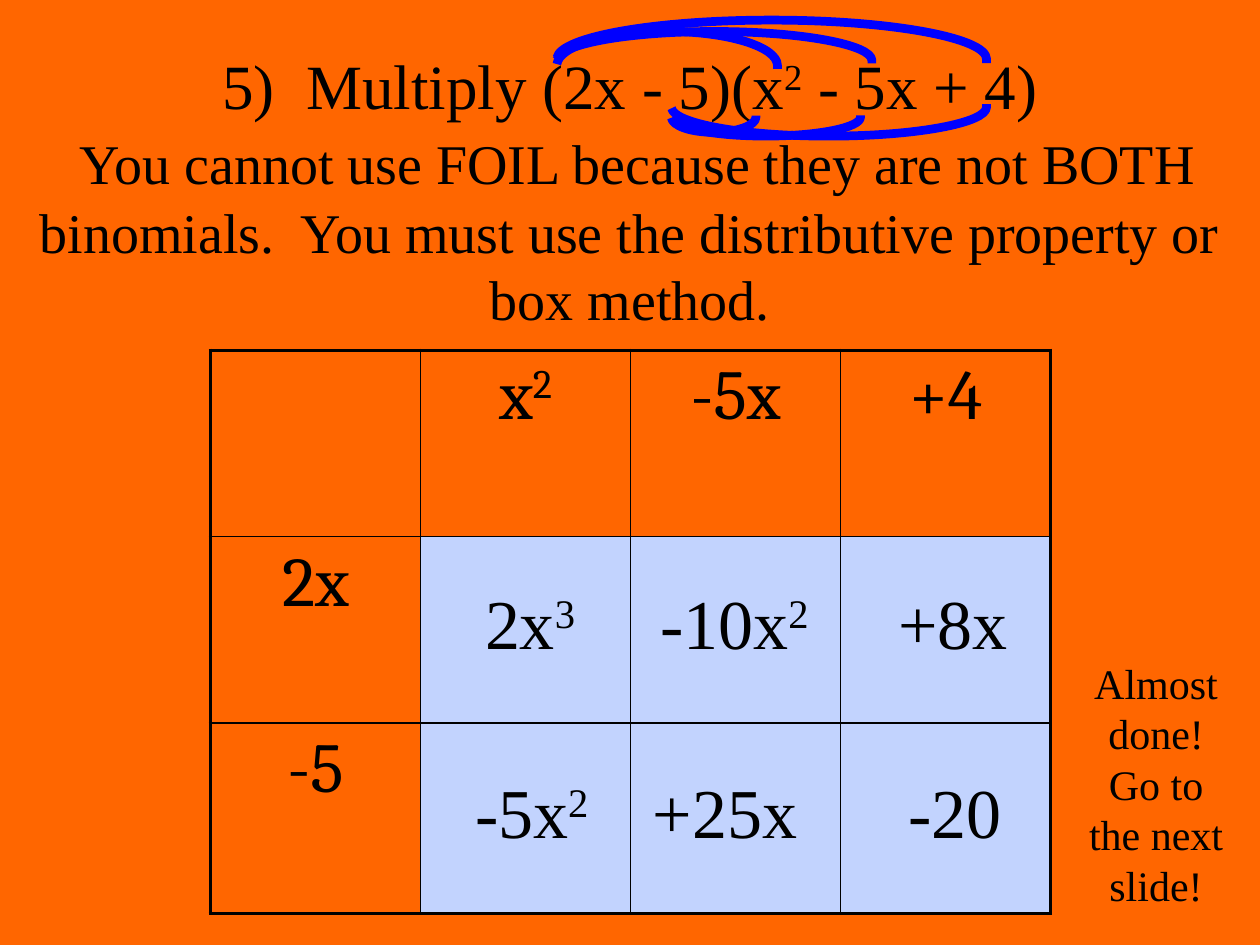
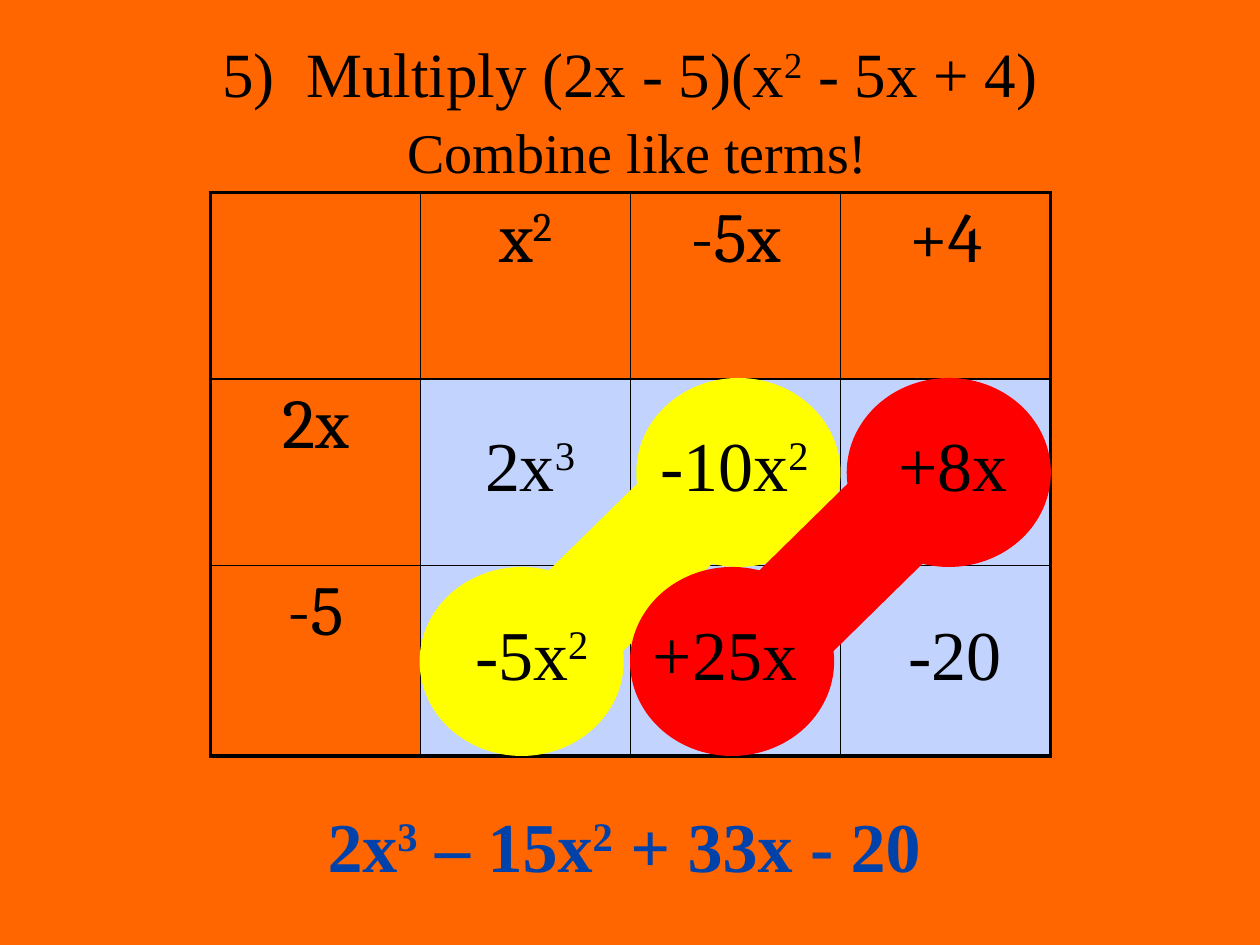
import lxml.etree
import pptx
import pptx.dml.color
import pptx.enum.shapes
import pptx.enum.text
import pptx.oxml.ns
import pptx.util

Inches = pptx.util.Inches
Pt = pptx.util.Pt
RGBColor = pptx.dml.color.RGBColor
PP_ALIGN = pptx.enum.text.PP_ALIGN
MSO_ANCHOR = pptx.enum.text.MSO_ANCHOR
MSO_SHAPE = pptx.enum.shapes.MSO_SHAPE
FIT_SHAPE = pptx.enum.text.MSO_AUTO_SIZE.SHAPE_TO_FIT_TEXT
qn = pptx.oxml.ns.qn

ORANGE = RGBColor(0xFF, 0x66, 0x00)
BLACK = RGBColor(0x00, 0x00, 0x00)
PALE_BLUE = RGBColor(0xC2, 0xD3, 0xFE)
ARC_BLUE = RGBColor(0x00, 0x00, 0xFF)
ANSWER_BLUE = RGBColor(0x00, 0x42, 0xA9)
YELLOW = RGBColor(0xFF, 0xFF, 0x00)
RED = RGBColor(0xFF, 0x00, 0x00)

SERIF = "Times New Roman"
PROBLEM = "5)  Multiply (2x - 5)(x^2 - 5x + 4)"
INSET = Inches(0.05)
MARGINS = {f"margin_{side}": INSET for side in ("left", "top", "right", "bottom")}

GRID_LABELS = [["", "x^2", "-5x", "+4"], ["2x", "", "", ""], ["-5", "", "", ""]]
GRID_WIDTH = 6.67
ROW_HEIGHTS = [1.48, 1.48, 1.51]

PRODUCT_ROWS = [
    (1.77, [("2x^3", 3.8, 0.9), ("-10x^2", 5.19, 1.34), ("+8x", 7.08, 1.12)]),
    (3.27, [("-5x^2", 3.72, 1.12), ("+25x", 5.13, 1.32), ("-20", 7.16, 0.96)]),
]

UPPER_ARCS = [(4.42, 6.17, 0.52, -0.27), (4.42, 6.92, 0.48, -0.23), (4.42, 7.83, 0.47, -0.31)]
LOWER_ARCS = [(5.33, 6.0, 0.93, 0.12), (5.33, 6.83, 0.93, 0.15), (5.33, 7.83, 0.85, 0.23)]
ARC_START = (1, -0.1)
ARC_CURVES = [
    (1, -0.07), (1, -0.03), (1, 0),
    (1, 0.55), (0.55, 1), (0, 1),
    (-0.55, 1), (-0.98, 0.57), (-1, 0.04),
]


def apply_format(target, values):
    for name, value in values.items():
        setattr(target, name, value)


def add_spans(para, text, size, font=SERIF, color=BLACK, bold=False):
    first, *raised = text.split("^")
    pieces = [(first, False)]
    for part in raised:
        pieces += [(part[0], True), (part[1:], False)]
    for piece, is_exponent in pieces:
        if not piece:
            continue
        span = para.add_run()
        span.text = piece
        apply_format(span.font, {"name": font, "size": Pt(size), "bold": bold})
        span.font.color.rgb = color
        if is_exponent:
            span._r.get_or_add_rPr().set("baseline", "30000")


def add_text_frame(page, left, top, width, height, **settings):
    box = page.shapes.add_textbox(*map(Inches, (left, top, width, height)))
    frame = box.text_frame
    apply_format(frame, {"word_wrap": True, **MARGINS, **settings})
    return frame


def add_page(deck):
    page = deck.slides.add_slide(deck.slide_layouts[6])
    page.background.fill.solid()
    page.background.fill.fore_color.rgb = ORANGE
    return page


def add_title(page, instruction, height):
    frame = add_text_frame(page, 0, 0.25, 10, height, vertical_anchor=MSO_ANCHOR.MIDDLE)
    para = frame.paragraphs[0]
    para.alignment = PP_ALIGN.CENTER
    add_spans(para, PROBLEM, 36)
    para.add_line_break()
    add_spans(para, " ", 36)
    add_spans(para, instruction, 32)


def set_borders(cell, widths):
    properties = cell._tc.get_or_add_tcPr()
    for position, (side, width) in enumerate(widths.items()):
        line = lxml.etree.Element(qn(f"a:ln{side}"), w=str(Pt(width)))
        fill = lxml.etree.SubElement(line, qn("a:solidFill"))
        lxml.etree.SubElement(fill, qn("a:srgbClr"), val=str(BLACK))
        properties.insert(position, line)


def add_box_grid(page, top):
    row_count, column_count = len(GRID_LABELS), len(GRID_LABELS[0])
    grid = page.shapes.add_table(
        row_count, column_count, Inches(1.67), Inches(top),
        Inches(GRID_WIDTH), Inches(sum(ROW_HEIGHTS)),
    ).table
    apply_format(grid, {"first_row": False, "horz_banding": False})
    for column in grid.columns:
        column.width = Inches(GRID_WIDTH / column_count)
    for row, height in zip(grid.rows, ROW_HEIGHTS):
        row.height = Inches(height)
    for row, labels in enumerate(GRID_LABELS):
        for column, label in enumerate(labels):
            cell = grid.cell(row, column)
            apply_format(cell, MARGINS)
            if row and column:
                cell.fill.solid()
                cell.fill.fore_color.rgb = PALE_BLUE
            else:
                cell.fill.background()
            para = cell.text_frame.paragraphs[0]
            apply_format(para, {"alignment": PP_ALIGN.CENTER, "space_before": Pt(9)})
            add_spans(para, label, 40, "Cambria")
            outer = {
                "L": column == 0,
                "R": column == column_count - 1,
                "T": row == 0,
                "B": row == row_count - 1,
            }
            set_borders(cell, {side: 2.25 if edge else 1 for side, edge in outer.items()})


def add_products(page, grid_top):
    for offset, products in PRODUCT_ROWS:
        for text, left, width in products:
            frame = add_text_frame(page, left, grid_top + offset, width, 0.73, auto_size=FIT_SHAPE)
            add_spans(frame.paragraphs[0], text, 40)


def curve_segments(shape):
    segments = shape._element.findall(".//" + qn("a:lnTo"))
    for first in range(0, len(segments), 3):
        curve = lxml.etree.Element(qn("a:cubicBezTo"))
        segments[first].addprevious(curve)
        for segment in segments[first:first + 3]:
            curve.append(segment[0])
            segment.getparent().remove(segment)


def add_arc(page, left, right, middle, bulge):
    center, radius = (left + right) / 2, (right - left) / 2
    start, *controls = [
        (Inches(center + radius * across), Inches(middle + bulge * along))
        for across, along in [ARC_START, *ARC_CURVES]
    ]
    outline = page.shapes.build_freeform(*start)
    outline.add_line_segments(controls, close=False)
    arc = outline.convert_to_shape()
    curve_segments(arc)
    arc.shadow.inherit = False
    arc.fill.background()
    arc.line.color.rgb = ARC_BLUE
    arc.line.width = Pt(5)


def add_like_terms_link(page, left, upper_left, color):
    link = page.shapes.add_group_shape()
    parts = [
        (MSO_SHAPE.OVAL, left, 4.5, 1.62, 1.5, 0),
        (MSO_SHAPE.OVAL, upper_left, 3, 1.62, 1.5, 0),
        (MSO_SHAPE.RECTANGLE, left + 0.3, 4.05, 2.78, 0.87, 315.5),
    ]
    for kind, x, y, width, height, rotation in parts:
        part = link.shapes.add_shape(kind, *map(Inches, (x, y, width, height)))
        part.rotation = rotation
        part.shadow.inherit = False
        part.fill.solid()
        part.fill.fore_color.rgb = color
        part.line.fill.background()


def add_hint(page):
    frame = add_text_frame(page, 8.55, 5.17, 1.25, 1.96, auto_size=FIT_SHAPE)
    for para, text in (
        (frame.paragraphs[0], "Almost done!"),
        (frame.add_paragraph(), "Go to the next slide!"),
    ):
        para.alignment = PP_ALIGN.CENTER
        add_spans(para, text, 24)


def add_answer(page):
    frame = add_text_frame(page, 2.55, 6.32, 4.87, 0.73, auto_size=FIT_SHAPE, word_wrap=False)
    add_spans(frame.paragraphs[0], "2x^3 – 15x^2 + 33x - 20", 40, color=ANSWER_BLUE, bold=True)


def build_distribute_page(deck):
    page = add_page(deck)
    grid_top = 2.78
    add_box_grid(page, grid_top)
    add_title(
        page,
        "You cannot use FOIL because they are not BOTH binomials.  "
        "You must use the distributive property or box method.",
        2.5,
    )
    add_products(page, grid_top)
    for arc in UPPER_ARCS + LOWER_ARCS:
        add_arc(page, *arc)
    add_hint(page)


def build_combine_page(deck):
    page = add_page(deck)
    grid_top = 1.53
    add_box_grid(page, grid_top)
    add_title(page, "Combine like terms!", 1.25)
    add_like_terms_link(page, 3.33, 5.05, YELLOW)
    add_like_terms_link(page, 5, 6.72, RED)
    add_products(page, grid_top)
    add_answer(page)


def main():
    deck = pptx.Presentation()
    apply_format(deck, {"slide_width": Inches(10), "slide_height": Inches(7.5)})
    build_distribute_page(deck)
    build_combine_page(deck)
    deck.save("out.pptx")


if __name__ == "__main__":
    main()
